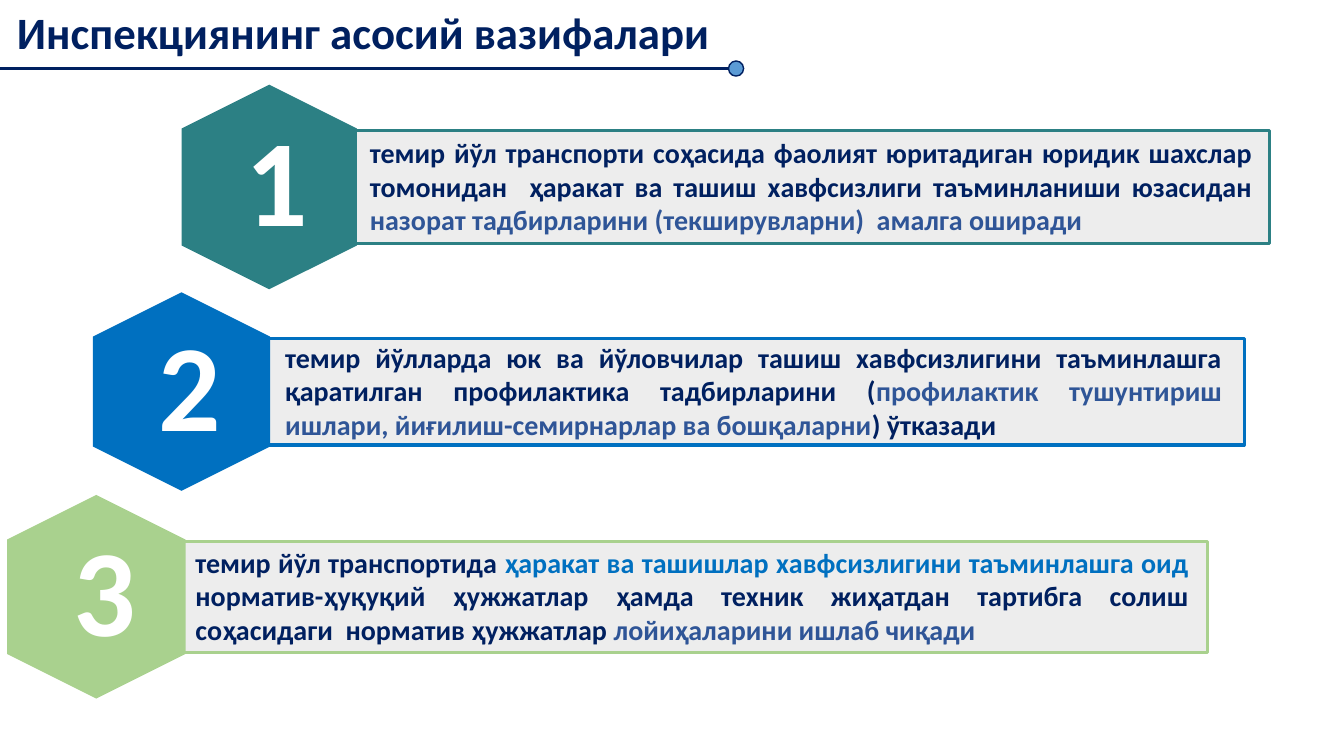
from dataclasses import dataclass

from lxml.etree import SubElement
from pptx import Presentation
from pptx.dml.color import RGBColor
from pptx.enum.shapes import MSO_CONNECTOR, MSO_SHAPE
from pptx.enum.text import MSO_ANCHOR, PP_ALIGN
from pptx.oxml.ns import qn
from pptx.util import Inches, Pt


@dataclass(frozen=True)
class Theme:
    font: str = "Calibri"
    navy: str = "002060"
    steel: str = "2F5597"
    blue: str = "0070C0"
    teal: str = "2C8084"
    green: str = "A9D18E"
    dot: str = "5B9BD5"
    panel: str = "EDEDED"
    white: str = "FFFFFF"
    title_size: int = 32
    body_size: int = 20
    number_size: int = 88


T = Theme()
W, H = 13.33, 7.5

# Each task: colour, hexagon box, right edge of the bar, bar height,
# left and right gap between bar and caption, caption runs
TASKS = [
    (T.teal, (1.8, 0.84, 1.74, 2.03), 12.59, 1.12, (0.06, 0.07), [
        ("темир йўл транспорти соҳасида фаолият юритадиган юридик шахслар "
         "томонидан  ҳаракат ва ташиш хавфсизлиги таъминланиши юзасидан ", T.navy),
        ("назорат тадбирларини (текширувларни)  амалга оширади", T.steel)]),
    (T.blue, (0.92, 2.9, 1.76, 1.97), 12.34, 1.06, (0.08, 0.12), [
        ("темир йўлларда юк ва йўловчилар ташиш хавфсизлигини таъминлашга "
         "қаратилган профилактика тадбирларини (", T.navy),
        ("профилактик тушунтириш ишлари, йиғилиш-семирнарлар ва бошқаларни", T.steel),
        (") ўтказади", T.navy)]),
    (T.green, (0.07, 4.91, 1.77, 2.02), 11.98, 1.1, (0.03, 0.09), [
        ("темир йўл транспортида ", T.navy),
        ("ҳаракат ва ташишлар хавфсизлигини таъминлашга оид ", T.blue),
        ("норматив-ҳуқуқий ҳужжатлар ҳамда техник жиҳатдан тартибга солиш "
         "соҳасидаги  норматив ҳужжатлар ", T.navy),
        ("лойиҳаларини ишлаб чиқади", T.steel)]),
]


def rgb(value):
    return RGBColor.from_string(value)


def add_block(s, kind, box, fill, line=None, width=1):
    sp = s.shapes.add_shape(kind, *map(Inches, box))
    sp.shadow.inherit = False
    sp.fill.solid()
    sp.fill.fore_color.rgb = rgb(fill)
    if line:
        sp.line.color.rgb = rgb(line)
        sp.line.width = Pt(width)
    else:
        sp.line.fill.background()
    return sp


def add_text(s, box, runs, size, align=PP_ALIGN.LEFT, anchor=MSO_ANCHOR.TOP,
             wrap=True, inset=None, spacing=None):
    tf = s.shapes.add_textbox(*map(Inches, box)).text_frame
    tf.word_wrap = wrap
    tf.vertical_anchor = anchor
    if inset is not None:
        tf.margin_left = tf.margin_right = Inches(inset)
        tf.margin_top = tf.margin_bottom = Inches(inset)
    p = tf.paragraphs[0]
    p.alignment = align
    if spacing:
        p.line_spacing = spacing
    for text, color in runs:
        r = p.add_run()
        r.text = text
        r.font.name, r.font.size, r.font.bold = T.font, Pt(size), True
        r.font.color.rgb = rgb(color)


def add_title(s, x, y, w, h, text):
    add_text(s, (x + 0.07, y, w - 0.15, h - 0.04), [(text, T.navy)],
             T.title_size, wrap=False)
    # Underline ending in a dot
    line = s.shapes.add_connector(MSO_CONNECTOR.STRAIGHT, Inches(x), Inches(y + h),
                                  Inches(x + w), Inches(y + h))
    line.line.color.rgb = rgb(T.navy)
    line.line.width = Pt(1.5)
    SubElement(line._element.spPr, qn("a:effectLst"))
    d = 0.15
    add_block(s, MSO_SHAPE.OVAL, (x + w - d / 2, y + h - d / 2, d, d), T.dot, T.navy)


def add_task(s, number, color, box, bar_right, bar_h, gaps, runs):
    x, y, w, h = box
    cx, cy = x + w / 2, y + h / 2
    # Bar, tucked slightly under the hexagon
    bar_x = x + w - 0.03
    add_block(s, MSO_SHAPE.RECTANGLE,
              (bar_x, cy - bar_h / 2, bar_right - bar_x, bar_h), T.panel, color, 2.25)
    # Hexagon standing on its point
    hexagon = add_block(s, MSO_SHAPE.HEXAGON, (cx - h / 2, cy - w / 2, h, w), color)
    hexagon.rotation = 90
    # Number
    add_text(s, (cx - 0.6, cy - 0.7, 1.2, 1.4), [(str(number), T.white)],
             T.number_size, PP_ALIGN.CENTER, MSO_ANCHOR.MIDDLE, inset=0.37, spacing=0.9)
    # Caption
    left, right = gaps
    add_text(s, (bar_x + left, cy - 0.56, bar_right - bar_x - left - right, 1.11),
             runs, T.body_size, PP_ALIGN.JUSTIFY)


def main():
    prs = Presentation()
    prs.slide_width, prs.slide_height = Inches(W), Inches(H)
    s = prs.slides.add_slide(prs.slide_layouts[6])
    add_title(s, 0, 0, 7.3, 0.68, "Инспекциянинг асосий вазифалари")
    for number, task in enumerate(TASKS, 1):
        add_task(s, number, *task)
    prs.save("out.pptx")


if __name__ == "__main__":
    main()
